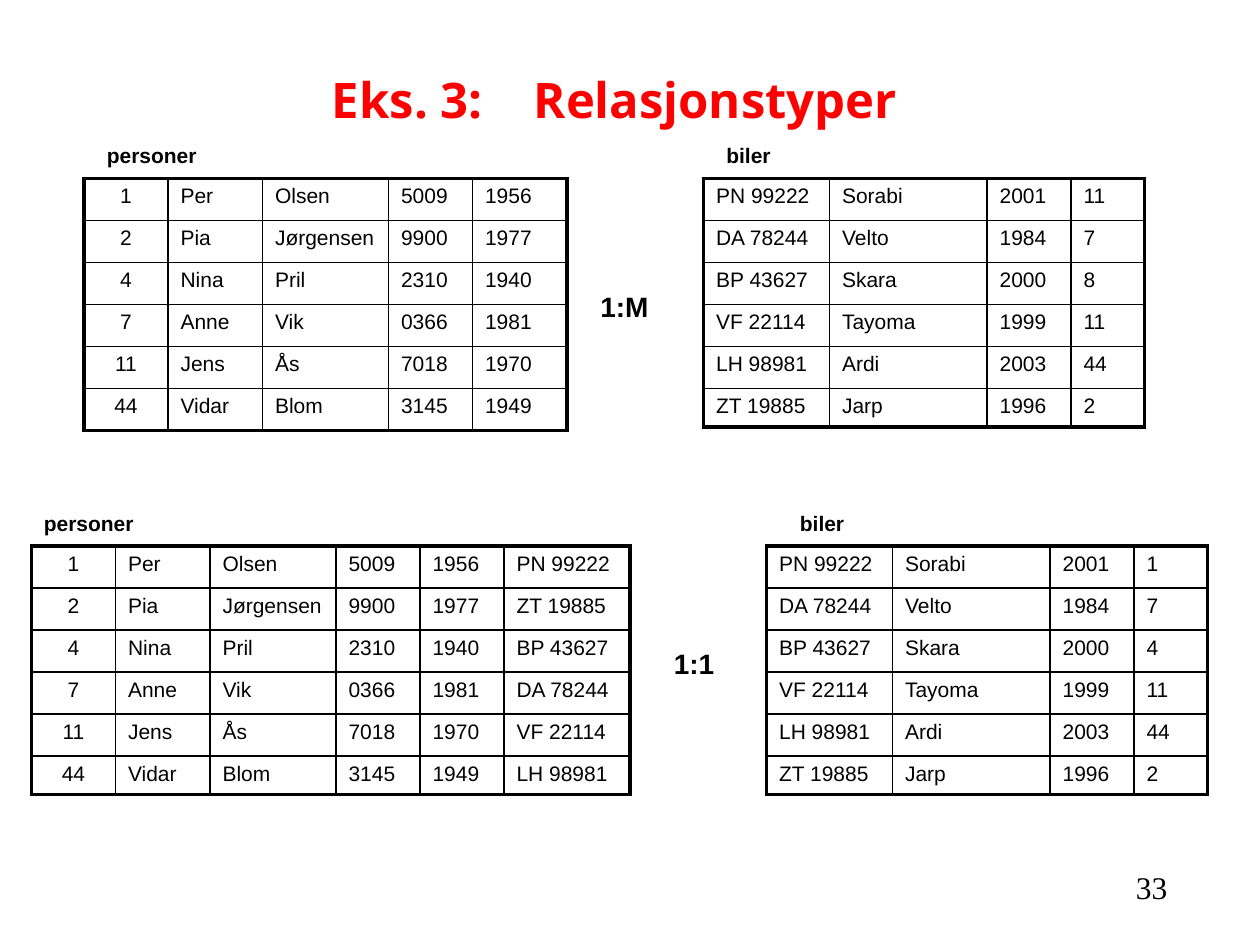
import dataclasses

import lxml.etree
import pptx
import pptx.dml.color
import pptx.enum.text
import pptx.oxml.ns
import pptx.util

Pt = pptx.util.Pt
ALIGN = pptx.enum.text.PP_ALIGN
ANCHOR = pptx.enum.text.MSO_ANCHOR
AUTO_SIZE = pptx.enum.text.MSO_AUTO_SIZE


@dataclasses.dataclass(frozen=True)
class Theme:
    ink: str = "000000"
    accent: str = "FF0000"
    title_font: str = "Open Sans"
    body_font: str = "Arial"
    number_font: str = "Times New Roman"
    title_size: float = 28
    number_size: float = 18
    relation_size: float = 16
    body_size: float = 12
    outer_line: float = 2.25
    inner_line: float = 1
    title_gap: float = 22


THEME = Theme()

PERSONS = [
    ("1", "Per", "Olsen", "5009", "1956"),
    ("2", "Pia", "Jørgensen", "9900", "1977"),
    ("4", "Nina", "Pril", "2310", "1940"),
    ("7", "Anne", "Vik", "0366", "1981"),
    ("11", "Jens", "Ås", "7018", "1970"),
    ("44", "Vidar", "Blom", "3145", "1949"),
]
CARS = [
    ("PN 99222", "Sorabi", "2001"),
    ("DA 78244", "Velto", "1984"),
    ("BP 43627", "Skara", "2000"),
    ("VF 22114", "Tayoma", "1999"),
    ("LH 98981", "Ardi", "2003"),
    ("ZT 19885", "Jarp", "1996"),
]
OWNERS_ONE_TO_MANY = ["11", "7", "8", "11", "44", "2"]
OWNERS_ONE_TO_ONE = ["1", "7", "4", "11", "44", "2"]
PERSON_CARS = ["PN 99222", "ZT 19885", "BP 43627", "DA 78244", "VF 22114", "LH 98981"]

CAR_COLUMNS = [72, 90, 48, 42]
ROW_HEIGHT = 24
SHORT_ROW = 22


def with_column(rows, column):
    return [(*row, value) for row, value in zip(rows, column)]


def style_paragraph(paragraph, size, font=THEME.body_font, color=THEME.ink,
                    bold=False, align=ALIGN.LEFT):
    paragraph.alignment = align
    for run in paragraph.runs:
        run.font.name = font
        run.font.size = Pt(size)
        run.font.bold = bold
        run.font.color.rgb = pptx.dml.color.RGBColor.from_string(color)


def add_label(slide, text, left, top, width, height, size, **style):
    label = slide.shapes.add_textbox(Pt(left), Pt(top), Pt(width), Pt(height))
    frame = label.text_frame
    frame.word_wrap = True
    frame.text = text
    style_paragraph(frame.paragraphs[0], size, **style)


def set_border(cell, side, width):
    line = lxml.etree.SubElement(cell._tc.get_or_add_tcPr(),
                                 pptx.oxml.ns.qn(f"a:ln{side}"), w=str(Pt(width)))
    fill = lxml.etree.SubElement(line, pptx.oxml.ns.qn("a:solidFill"))
    lxml.etree.SubElement(fill, pptx.oxml.ns.qn("a:srgbClr"), val=THEME.ink)


def add_relation_table(slide, name, rows, left, top, columns,
                       name_indent, name_width, last_row, centre_key=False):
    """Draw a relation with its name above; left and top are the table's corner."""
    add_label(slide, name, left + name_indent, top - 24, name_width, 21.6,
              THEME.body_size, bold=True)
    heights = [ROW_HEIGHT] * (len(rows) - 1) + [last_row]
    table = slide.shapes.add_table(len(rows), len(columns), Pt(left), Pt(top),
                                   Pt(sum(columns)), Pt(sum(heights))).table
    table.first_row = False
    table.horz_banding = False
    for column, width in zip(table.columns, columns):
        column.width = Pt(width)
    for row, height in zip(table.rows, heights):
        row.height = Pt(height)
    for r, values in enumerate(rows):
        for c, value in enumerate(values):
            cell = table.cell(r, c)
            cell.text_frame.text = value
            centred = centre_key and c == 0
            style_paragraph(cell.text_frame.paragraphs[0], THEME.body_size,
                            align=ALIGN.CENTER if centred else ALIGN.LEFT)
            outer_sides = {"L": c == 0, "R": c == len(columns) - 1,
                           "T": r == 0, "B": r == len(rows) - 1}
            for side, is_outer in outer_sides.items():
                set_border(cell, side, THEME.outer_line if is_outer else THEME.inner_line)
            cell.fill.background()


def add_relation_type(slide, text, left, top):
    add_label(slide, text, left, top, 48, 26.4, THEME.relation_size, bold=True)


def add_title(slide, left, top, width, height):
    title = slide.shapes.title
    title.left, title.top, title.width, title.height = map(Pt, (left, top, width, height))
    frame = title.text_frame
    frame.auto_size = AUTO_SIZE.NONE
    frame.vertical_anchor = ANCHOR.BOTTOM
    heading = frame.paragraphs[0]
    for part in ("Eks. 3:", " ", "Relasjonstyper"):
        heading.add_run().text = part
    style_paragraph(heading, THEME.title_size, font=THEME.title_font,
                    color=THEME.accent, bold=True, align=ALIGN.CENTER)
    # Widen the single space between number and topic by letter spacing.
    heading.runs[1].font._element.set("spc", str(THEME.title_gap * 100))


def add_one_to_many(slide, left, top):
    add_relation_table(slide, "personer", PERSONS, left, top, [48, 54, 72, 48, 54],
                       name_indent=6, name_width=108, last_row=ROW_HEIGHT,
                       centre_key=True)
    add_relation_table(slide, "biler", with_column(CARS, OWNERS_ONE_TO_MANY),
                       left + 354, top, CAR_COLUMNS,
                       name_indent=6, name_width=60, last_row=SHORT_ROW)
    add_relation_type(slide, "1:M", left + 288, top + 60)


def add_one_to_one(slide, left, top):
    add_relation_table(slide, "personer", with_column(PERSONS, PERSON_CARS),
                       left, top, [48, 54, 72, 48, 48, 72],
                       name_indent=0, name_width=108, last_row=SHORT_ROW,
                       centre_key=True)
    add_relation_table(slide, "biler", with_column(CARS, OWNERS_ONE_TO_ONE),
                       left + 420, top, CAR_COLUMNS,
                       name_indent=12, name_width=60, last_row=SHORT_ROW)
    add_relation_type(slide, "1:1", left + 360, top + 54)


def main():
    deck = pptx.Presentation()
    deck.slide_width, deck.slide_height = Pt(720), Pt(540)
    slide = deck.slides.add_slide(deck.slide_layouts.get_by_name("Title Only"))
    add_title(slide, 36, 30, 630, 46.8)
    add_one_to_many(slide, 48, 102)
    add_one_to_one(slide, 18, 312)
    add_label(slide, "33", 642, 492.5, 42, 28.8, THEME.number_size,
              font=THEME.number_font)
    deck.save("out.pptx")


if __name__ == "__main__":
    main()
